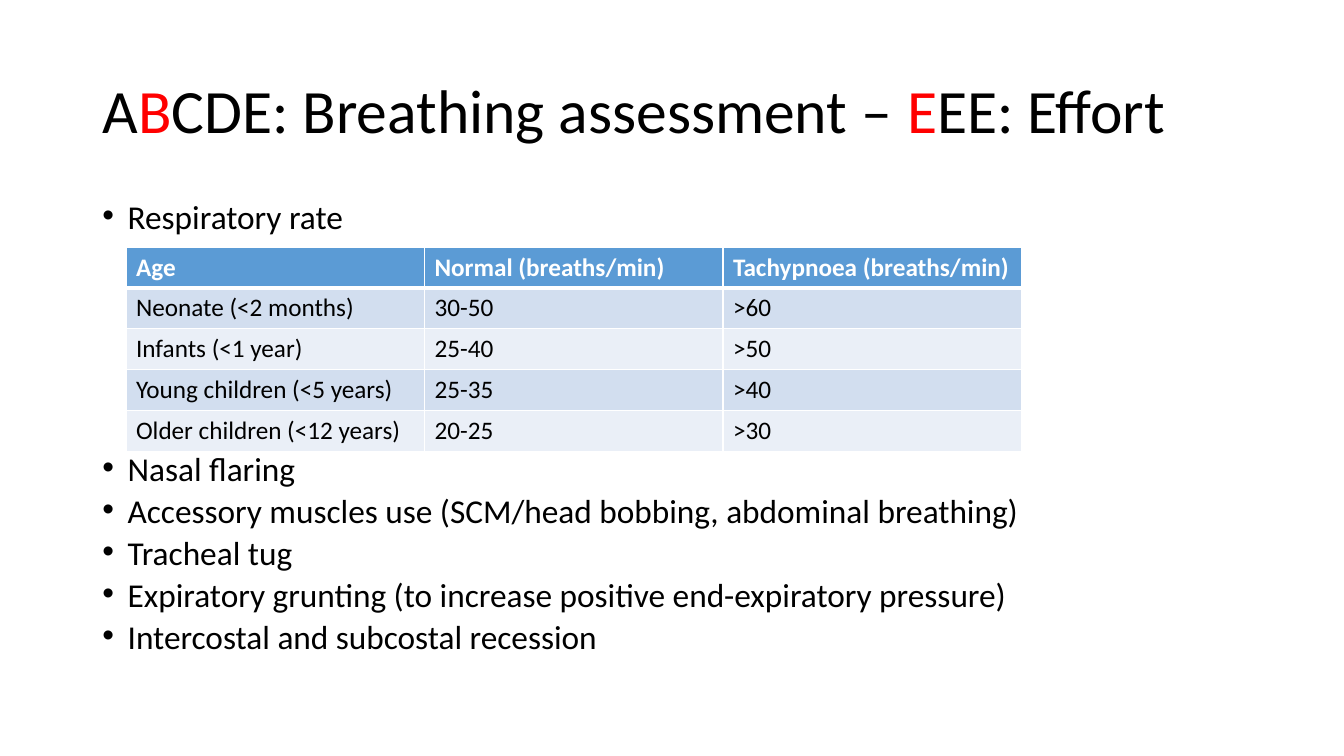
from dataclasses import dataclass
from lxml import etree
from pptx import Presentation
from pptx.dml.color import RGBColor
from pptx.enum import text
from pptx.oxml import ns
from pptx import util as u

BLACK = RGBColor(0, 0, 0)
WHITE = RGBColor(255, 255, 255)
RED = RGBColor(255, 0, 0)
BLUE = RGBColor(0x5B, 0x9B, 0xD5)
PALE = RGBColor(0xD2, 0xDE, 0xEF)
LIGHT = RGBColor(0xEA, 0xEF, 0xF7)
FONT = "Calibri"
UNIT = u.Inches(1) // 12
COLS, ROWS = 160, 90


@dataclass(frozen=True)
class Box:
    col: float
    row: float
    wide: float
    high: float

    def place(self) -> list[int]:
        return [round(n * UNIT) for n in (self.col, self.row, self.wide, self.high)]


@dataclass(frozen=True)
class Span:
    words: str
    ink: RGBColor = BLACK


@dataclass(frozen=True)
class Point:
    words: str
    gap: float = 10


HEAD = [
    Span("A"), Span("B", RED), Span("CDE: Breathing assessment – "),
    Span("E", RED), Span("EE: Effort"),
]
POINTS = [
    Point("Respiratory rate"),
    Point("Nasal flaring", 160),
    Point("Accessory muscles use (SCM/head bobbing, abdominal breathing)"),
    Point("Tracheal tug"),
    Point("Expiratory grunting (to increase positive end-expiratory pressure)"),
    Point("Intercostal and subcostal recession"),
]
RATES = [
    ("Age", "Normal (breaths/min)", "Tachypnoea (breaths/min)"),
    ("Neonate (<2 months)", "30-50", ">60"),
    ("Infants (<1 year)", "25-40", ">50"),
    ("Young children (<5 years)", "25-35", ">40"),
    ("Older children (<12 years)", "20-25", ">30"),
]


def put(shape, box: Box) -> None:
    shape.left, shape.top, shape.width, shape.height = box.place()
    shape.text_frame.auto_size = text.MSO_AUTO_SIZE.NONE
    shape.text_frame.word_wrap = True


def write(para, span: Span, size: float, bold: bool = False) -> None:
    run = para.add_run()
    run.text = span.words
    run.font.name = FONT
    run.font.size = u.Pt(size)
    run.font.bold = bold
    run.font.color.rgb = span.ink


def draw_title(shape, spans: list[Span], box: Box) -> None:
    put(shape, box)
    shape.text_frame.vertical_anchor = text.MSO_ANCHOR.MIDDLE
    para = shape.text_frame.paragraphs[0]
    para.alignment = text.PP_ALIGN.LEFT
    para.line_spacing = 0.9
    for span in spans:
        write(para, span, 44)


def draw_list(shape, points: list[Point], box: Box) -> None:
    put(shape, box)
    frame = shape.text_frame
    for i, point in enumerate(points):
        para = frame.add_paragraph() if i else frame.paragraphs[0]
        para.line_spacing = 0.7
        para.space_before = u.Pt(point.gap)
        props = para._p.get_or_add_pPr()
        props.set("marL", str(u.Inches(0.25)))
        props.set("indent", str(-u.Inches(0.25)))
        etree.SubElement(props, ns.qn("a:buFont")).set("typeface", "Arial")
        etree.SubElement(props, ns.qn("a:buChar")).set("char", "•")
        write(para, Span(point.words), 23.8)


def edge(cell, sides: dict[str, float]) -> None:
    props = cell._tc.get_or_add_tcPr()
    for i, (side, width) in enumerate(sides.items()):
        line = etree.Element(ns.qn(f"a:ln{side}"), w=str(u.Pt(width)))
        fill = etree.SubElement(line, ns.qn("a:solidFill"))
        etree.SubElement(fill, ns.qn("a:srgbClr")).set("val", str(WHITE))
        props.insert(i, line)


def draw_table(slide, rows: list[tuple[str, ...]], box: Box) -> None:
    grid = slide.shapes.add_table(len(rows), len(rows[0]), *box.place()).table
    for i, row in enumerate(rows):
        for j, words in enumerate(row):
            cell = grid.cell(i, j)
            cell.fill.solid()
            cell.fill.fore_color.rgb = (LIGHT, PALE)[i % 2] if i else BLUE
            edge(cell, {"L": 1, "R": 1, "T": 3 if i == 1 else 1, "B": 1 if i else 3})
            ink = BLACK if i else WHITE
            write(cell.text_frame.paragraphs[0], Span(words, ink), 18, i == 0)


def main() -> None:
    deck = Presentation()
    deck.slide_width, deck.slide_height = COLS * UNIT, ROWS * UNIT
    slide = deck.slides.add_slide(deck.slide_layouts[1])
    draw_title(slide.shapes.title, HEAD, Box(11, 4.8, 138, 17.4))
    draw_list(slide.placeholders[1], POINTS, Box(11, 24, 138, 57.1))
    draw_table(slide, RATES, Box(15, 29.4, 106.6, 24.4))
    deck.save("out.pptx")


if __name__ == "__main__":
    main()
